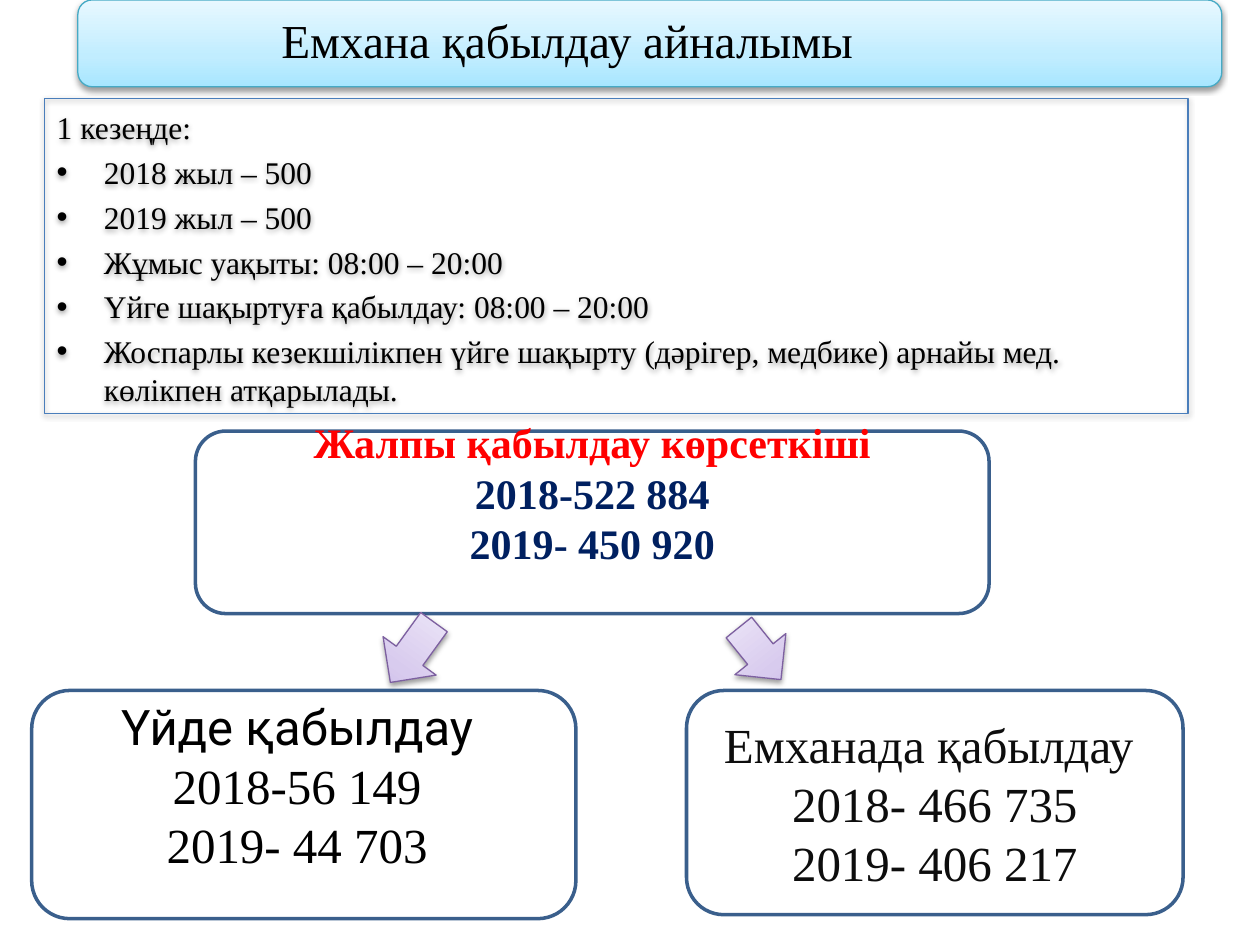
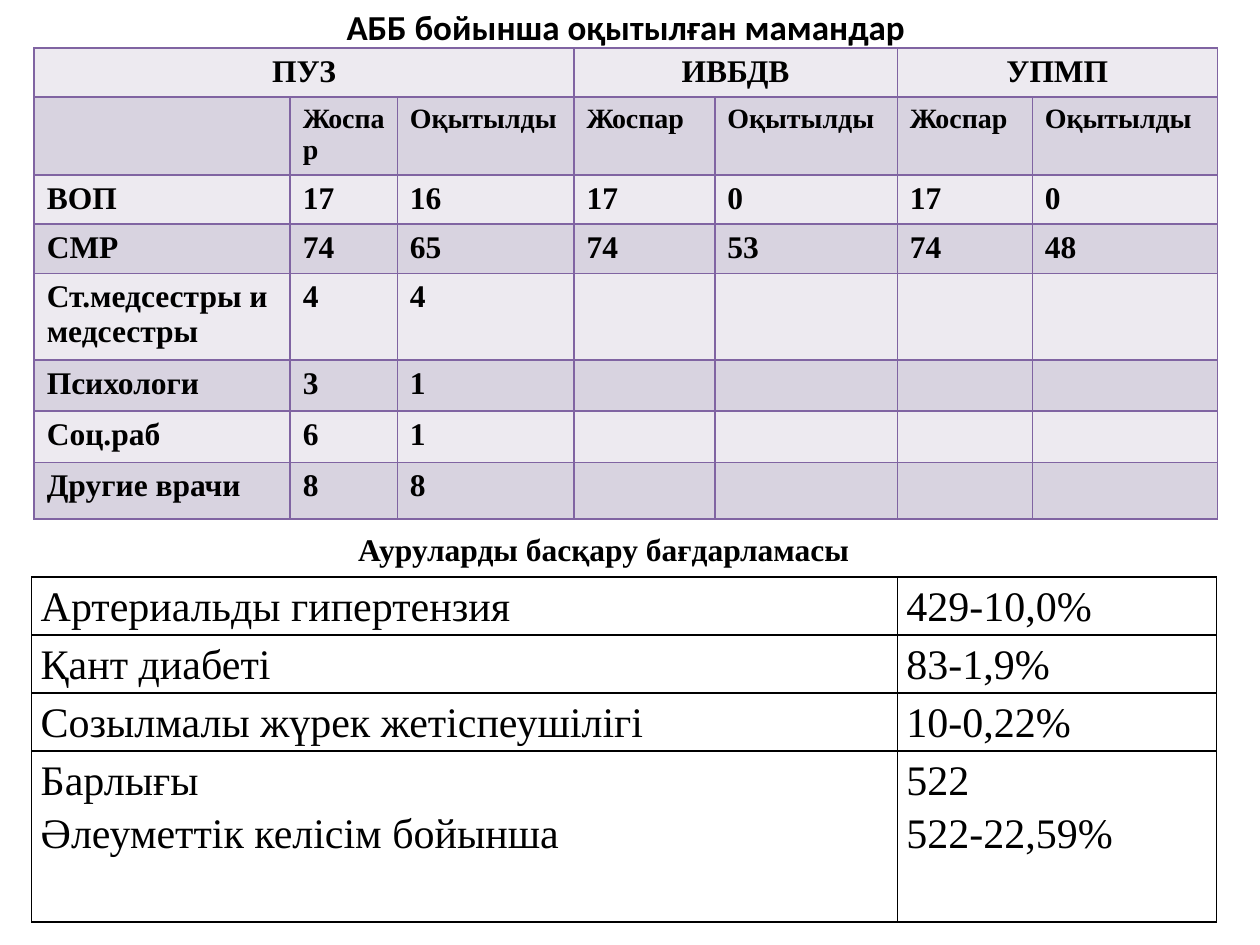
import dataclasses

import lxml.etree
import pptx
import pptx.dml.color
import pptx.enum.shapes
import pptx.enum.text
import pptx.oxml.ns
import pptx.util

Cm = pptx.util.Cm
Pt = pptx.util.Pt
qn = pptx.oxml.ns.qn
SHAPE = pptx.enum.shapes.MSO_SHAPE
ANCHOR = pptx.enum.text.MSO_ANCHOR
ALIGN = pptx.enum.text.PP_ALIGN


@dataclasses.dataclass(frozen=True)
class Theme:
    serif: str = "Times New Roman"
    sans: str = "Calibri"
    accent_font: str = "Roboto"
    black: str = "000000"
    soft_black: str = "0D0D0D"
    red: str = "FF0000"
    navy: str = "002060"
    frame: str = "3A5F8C"
    list_line: str = "4A7EBB"
    banner_line: str = "46AAC5"
    purple: str = "7D60A0"
    grid: str = "8064A2"
    bands: tuple = ("EDEAF0", "D8D3E0")
    banner_stops: tuple = ((0, "A7E6FF"), (35, "C1EDFF"), (100, "E7F8FF"))
    arrow_stops: tuple = ((0, "C9B5E8"), (35, "D8CBEE"), (100, "F0EAF9"))
    banner_size: int = 27
    card_size: int = 28
    large: int = 24
    heading: int = 20
    body: int = 18
    small: int = 16


THEME = Theme()


def rgb(color):
    return pptx.dml.color.RGBColor.from_string(color)


def child(parent, tag, **attributes):
    element = lxml.etree.SubElement(parent, qn(tag))
    for name, value in attributes.items():
        element.set(name, str(value))
    return element


def write(paragraph, text, size, color=THEME.black, font=THEME.serif, bold=False, align=None):
    if align is not None:
        paragraph.alignment = align
    run = paragraph.add_run()
    run.text = text
    run.font.size = Pt(size)
    run.font.name = font
    run.font.bold = bold
    run.font.color.rgb = rgb(color)


def paragraphs(frame, count):
    """Yield the given number of paragraphs, starting with the existing one."""
    yield frame.paragraphs[0]
    for _ in range(count - 1):
        yield frame.add_paragraph()


def write_centered(frame, lines):
    """Write (text, size, color, font, bold) lines, one paragraph each."""
    frame.word_wrap = True
    for paragraph, line in zip(paragraphs(frame, len(lines)), lines):
        write(paragraph, *line, align=ALIGN.CENTER)


def set_box(shape, box):
    shape.left, shape.top, shape.width, shape.height = (Cm(length) for length in box)


def set_outline(shape, color, width):
    shape.line.color.rgb = rgb(color)
    shape.line.width = Pt(width)


def add_shadow(shape):
    shape.shadow.inherit = False
    effects = shape._element.spPr.find(qn("a:effectLst"))
    shadow = child(effects, "a:outerShdw", blurRad=Pt(3.1), dist=Pt(1.6), dir=5400000, rotWithShape=0)
    color = child(shadow, "a:srgbClr", val=THEME.black)
    child(color, "a:alpha", val=38000)


def add_glossy_shape(slide, kind, box, stops, line_color, rotation=0):
    shape = slide.shapes.add_shape(kind, *(Cm(length) for length in box))
    shape.rotation = rotation
    shape.fill.gradient()
    shape.fill.gradient_angle = 90
    stop_list = shape._element.spPr.find(qn("a:gradFill")).find(qn("a:gsLst"))
    for old_stop in list(stop_list):
        stop_list.remove(old_stop)
    for position, color in stops:
        stop = child(stop_list, "a:gs", pos=position * 1000)
        child(stop, "a:srgbClr", val=color)
    set_outline(shape, line_color, 0.75)
    add_shadow(shape)


def add_frame(slide, box):
    """Add an unfilled rounded frame."""
    shape = slide.shapes.add_shape(SHAPE.ROUNDED_RECTANGLE, *(Cm(length) for length in box))
    shape.fill.background()
    shape.shadow.inherit = False
    set_outline(shape, THEME.frame, 2)
    shape.text_frame.vertical_anchor = ANCHOR.MIDDLE
    return shape


def place_title(slide, box, text, size, font, bold, align, left_inset=0.25):
    title = slide.shapes.title
    set_box(title, box)
    frame = title.text_frame
    frame.auto_size = pptx.enum.text.MSO_AUTO_SIZE.NONE
    frame.vertical_anchor = ANCHOR.MIDDLE
    frame.margin_left = Cm(left_inset)
    write(frame.paragraphs[0], text, size, font=font, bold=bold, align=align)
    return title


def add_banner(slide, box, text):
    add_glossy_shape(slide, SHAPE.ROUNDED_RECTANGLE, box, THEME.banner_stops, THEME.banner_line)
    title = place_title(slide, box, text, THEME.banner_size, THEME.serif, False, ALIGN.LEFT, 4.1)
    title.text_frame.paragraphs[0].line_spacing = 0.9
    slide.shapes._spTree.append(title._element)


def fill_schedule(slide, box, heading, items):
    body = slide.placeholders[1]
    set_box(body, box)
    set_outline(body, THEME.list_line, 0.75)
    add_shadow(body)
    frame = body.text_frame
    frame.auto_size = pptx.enum.text.MSO_AUTO_SIZE.NONE
    frame.margin_top = Cm(0.2)
    lines = [heading, *items]
    for index, (paragraph, text) in enumerate(zip(paragraphs(frame, len(lines)), lines)):
        properties = paragraph._p.get_or_add_pPr()
        properties.set("marL", str(Cm(0.95)))
        properties.set("indent", str(Cm(-0.95)))
        if index:
            child(properties, "a:buFont", typeface="Arial")
            child(properties, "a:buChar", char="•")
        else:
            child(properties, "a:buNone")
        paragraph.space_before = Pt(4 if index else 0)
        write(paragraph, text, THEME.body)


def add_total(slide, box, heading, figures):
    frame = add_frame(slide, box).text_frame
    frame.margin_top = 0
    frame.margin_bottom = Cm(1.2)
    lines = [(heading, THEME.large, THEME.red, THEME.serif, True)]
    lines += [(figure, THEME.large, THEME.navy, THEME.serif, True) for figure in figures]
    write_centered(frame, lines)


def add_home_card(slide, box, heading, figures):
    add_frame(slide, box)
    left, top, _, height = box
    text_box = slide.shapes.add_textbox(Cm(left + 0.78), Cm(top), Cm(9.14), Cm(height))
    lines = [(heading, THEME.card_size, THEME.black, THEME.accent_font)]
    write_centered(text_box.text_frame, lines + [(figure, THEME.card_size) for figure in figures])


def add_clinic_card(slide, box, lines):
    frame = add_frame(slide, box).text_frame
    write_centered(frame, [(line, THEME.card_size, THEME.soft_black) for line in lines])


def border_cell(cell, color):
    properties = cell._tc.get_or_add_tcPr()
    for position, tag in enumerate(("a:lnL", "a:lnR", "a:lnT", "a:lnB")):
        line = lxml.etree.Element(qn(tag), w=str(Pt(1)))
        fill = child(line, "a:solidFill")
        child(fill, "a:srgbClr", val=color)
        properties.insert(position, line)


def add_grid(slide, corner, columns, rows, border, bands=None):
    """Add an empty bordered table, with row fills cycling through the bands."""
    size = (sum(columns), sum(rows))
    frame = slide.shapes.add_table(len(rows), len(columns), *(Cm(v) for v in corner + size))
    table = frame.table
    table.first_row = table.horz_banding = False
    for column, width in zip(table.columns, columns):
        column.width = Cm(width)
    for index, (row, height) in enumerate(zip(table.rows, rows)):
        row.height = Cm(height)
        for cell in row.cells:
            if bands:
                cell.fill.solid()
                cell.fill.fore_color.rgb = rgb(bands[index % len(bands)])
            else:
                cell.fill.background()
            border_cell(cell, border)
    return table


def add_training_table(slide, corner, groups, staff):
    columns = (5.16, 2.16, 3.56, 2.84, 3.68, 2.72, 3.73)
    rows = (0.99, 1.57, 0.99, 0.99, 1.75, 0.99, 0.99, 1.14)
    table = add_grid(slide, corner, columns, rows, THEME.grid, THEME.bands)
    for name, first, last in groups:
        table.cell(0, first).merge(table.cell(0, last))
        paragraph = table.cell(0, first).text_frame.paragraphs[0]
        write(paragraph, name, THEME.body, bold=True, align=ALIGN.CENTER)
    header = ["", *["Жоспар", "Оқытылды"] * len(groups)]
    for row_index, values in enumerate([header, *staff], start=1):
        size = THEME.small if row_index == 1 else THEME.body
        for column_index, value in enumerate(values):
            if value:
                cell = table.cell(row_index, column_index)
                write(cell.text_frame.paragraphs[0], value, size, bold=True)


def add_disease_table(slide, corner, records):
    """Fill the table; each cell is a tuple of lines."""
    table = add_grid(slide, corner, (17.45, 6.43), (1.14, 1.14, 1.14, 3.45), THEME.black)
    for row, record in zip(table.rows, records):
        for cell, lines in zip(row.cells, record):
            cell.margin_left = cell.margin_right = Cm(0.18)
            cell.margin_top = cell.margin_bottom = 0
            for paragraph, line in zip(paragraphs(cell.text_frame, len(lines)), lines):
                paragraph.line_spacing = 1.15
                write(paragraph, line, THEME.large)


def add_subheading(slide, box, text):
    text_box = slide.shapes.add_textbox(*(Cm(length) for length in box))
    text_box.text_frame.word_wrap = True
    text_box.text_frame.margin_left = Cm(3.28)
    write(text_box.text_frame.paragraphs[0], text, THEME.body, bold=True)


def build_reception_slide(presentation):
    slide = presentation.slides.add_slide(presentation.slide_layouts[1])
    add_banner(slide, (1.57, 0, 23.06, 1.75), "Емхана қабылдау айналымы")
    fill_schedule(slide, (0.89, 1.98, 23.06, 6.35), "1 кезеңде:", [
        "2018 жыл – 500",
        "2019 жыл – 500",
        "Жұмыс уақыты: 08:00 – 20:00",
        "Үйге шақыртуға қабылдау: 08:00 – 20:00",
        "Жоспарлы кезекшілікпен үйге шақырту (дәрігер, медбике) арнайы мед. көлікпен атқарылады.",
    ])
    add_total(slide, (3.94, 8.69, 16, 3.68), "Жалпы қабылдау көрсеткіші",
              ["2018-522 884", "2019- 450 920"])
    for box, rotation in (((7.65, 12.4, 1.32, 1.5), 35.9), ((14.66, 12.5, 1.32, 1.35), 321.1)):
        add_glossy_shape(slide, SHAPE.DOWN_ARROW, box, THEME.arrow_stops, THEME.purple, rotation)
    add_home_card(slide, (0.64, 13.92, 10.97, 4.6), "Үйде қабылдау",
                  ["2018-56 149", "2019- 44 703"])
    add_clinic_card(slide, (13.84, 13.92, 10.01, 4.52),
                    ["Емханада қабылдау ", "2018- 466 735", "2019- 406 217"])


def build_training_slide(presentation):
    slide = presentation.slides.add_slide(presentation.slide_layouts[5])
    place_title(slide, (1.19, 0, 22.86, 1.07), "АББ бойынша оқытылған мамандар",
                THEME.heading, THEME.sans, True, ALIGN.CENTER)
    add_training_table(slide, (0.69, 0.97), [("ПУЗ", 0, 2), ("ИВБДВ", 3, 4), ("УПМП", 5, 6)], [
        ("ВОП", "17", "16", "17", "0", "17", "0"),
        ("СМР", "74", "65", "74", "53", "74", "48"),
        ("Ст.медсестры и медсестры", "4", "4"),
        ("Психологи", "3", "1"),
        ("Соц.раб", "6", "1"),
        ("Другие врачи", "8", "8"),
    ])
    add_subheading(slide, (3.94, 10.57, 18.67, 1.02), "Ауруларды басқару бағдарламасы")
    add_disease_table(slide, (0.64, 11.63), [
        (("Артериальды гипертензия",), ("429-10,0%",)),
        (("Қант диабеті",), ("83-1,9%",)),
        (("Созылмалы жүрек жетіспеушілігі",), ("10-0,22%",)),
        (("Барлығы", "Әлеуметтік келісім бойынша"), ("522", "522-22,59%")),
    ])


def main():
    presentation = pptx.Presentation()
    presentation.slide_width = Cm(25.4)
    presentation.slide_height = Cm(19.05)
    build_reception_slide(presentation)
    build_training_slide(presentation)
    presentation.save("out.pptx")


if __name__ == "__main__":
    main()
